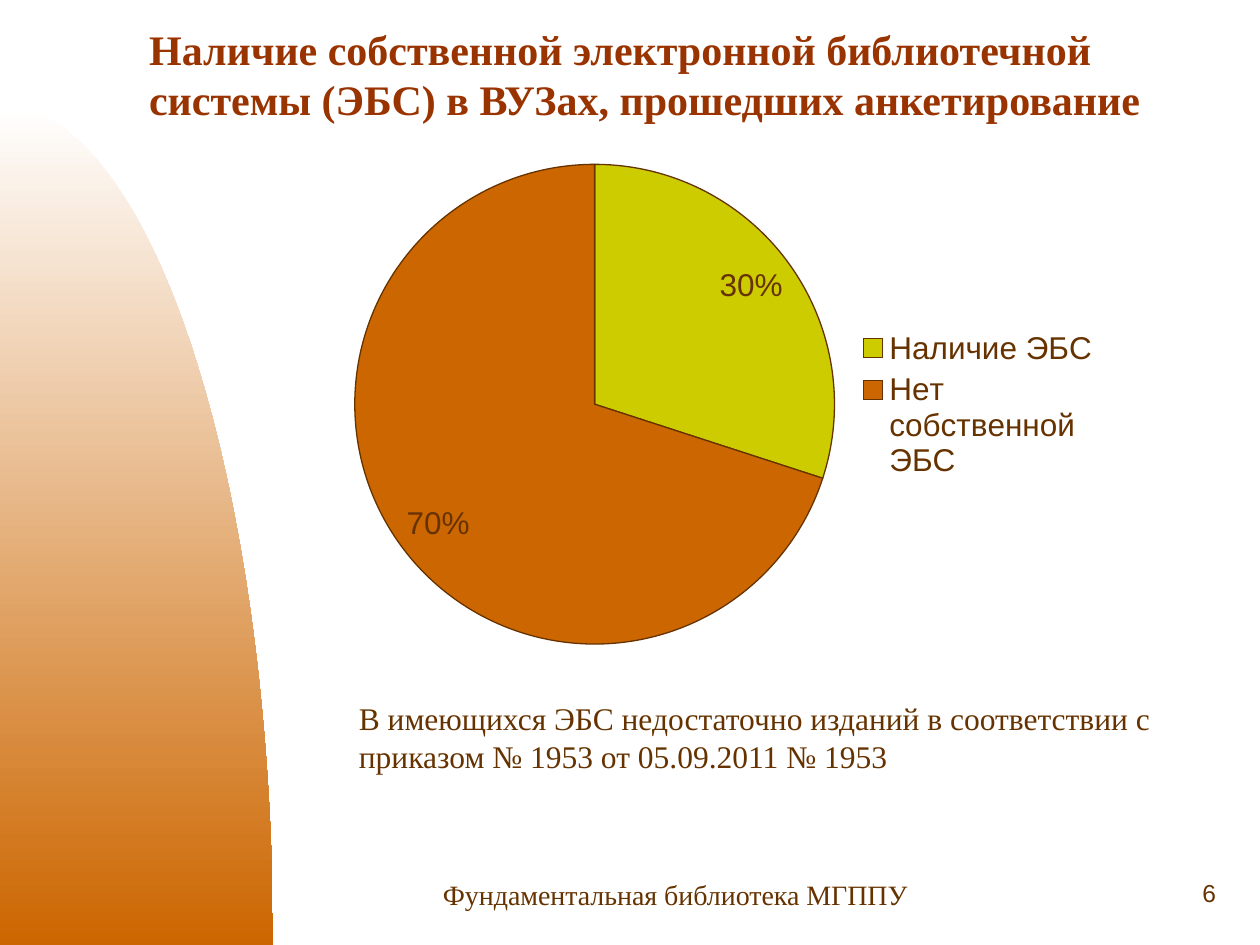
import math

import pptx
import pptx.chart.data
import pptx.dml.color
import pptx.enum.chart
import pptx.enum.text
import pptx.util

Pt = pptx.util.Pt
ALIGN = pptx.enum.text.PP_ALIGN
ANCHOR = pptx.enum.text.MSO_ANCHOR

WIDTH, HEIGHT = 720, 540
BROWN, RUST, ORANGE, LIME, WHITE = "663300", "993300", "CC6600", "CCCC00", "FFFFFF"
SERIF, SANS = "Times New Roman", "Arial"

TITLE = {
    "text": "Наличие собственной электронной библиотечной системы (ЭБС) в ВУЗах, прошедших анкетирование",
    "box": (78, 18, 618, 48), "anchor": ANCHOR.MIDDLE, "align": ALIGN.LEFT,
    "color": RUST, "font": {"name": SERIF, "size": Pt(24), "bold": True},
}
TEXTS = [
    {"text": "6", "box": (552, 492, 150, 36), "anchor": ANCHOR.MIDDLE,
     "align": ALIGN.RIGHT, "color": BROWN, "font": {"name": SANS, "size": Pt(14)}},
    {"text": "Фундаментальная библиотека МГППУ", "box": (246, 498, 306, 24),
     "anchor": ANCHOR.TOP, "align": ALIGN.LEFT, "color": BROWN,
     "font": {"name": SERIF, "size": Pt(16)}},
    {"text": "В имеющихся ЭБС недостаточно изданий в соответствии с приказом № 1953 от 05.09.2011 № 1953",
     "box": (198, 396, 468, 51), "anchor": ANCHOR.TOP, "align": ALIGN.LEFT,
     "color": BROWN, "font": {"name": SERIF, "size": Pt(18)}},
]
CHART_BOX = (192, 84, 444, 294)
SLICES = [("Наличие ЭБС", 0.3, LIME), ("Нет собственной ЭБС", 0.7, ORANGE)]
ARC_RADII = (156, 480)
ARC_STEPS = 90


def rgb(value):
    return pptx.dml.color.RGBColor.from_string(value)


def points(box):
    return [Pt(length) for length in box]


def set_font(font, color, values):
    for name, value in values.items():
        setattr(font, name, value)
    font.color.rgb = rgb(color)


def fill_text(shape, item):
    frame = shape.text_frame
    frame.text = item["text"]
    frame_format = {
        "word_wrap": True, "auto_size": pptx.enum.text.MSO_AUTO_SIZE.NONE,
        "vertical_anchor": item["anchor"],
    }
    for name, value in frame_format.items():
        setattr(frame, name, value)
    paragraph = frame.paragraphs[0]
    paragraph.alignment = item["align"]
    set_font(paragraph.runs[0].font, item["color"], item["font"])


def add_arc(slide):
    """Draw the gradient quarter ellipse in the bottom left corner."""
    radius_x, radius_y = ARC_RADII
    angles = [math.pi / 2 * step / ARC_STEPS for step in range(ARC_STEPS + 1)]
    curve = [(radius_x * math.sin(angle), HEIGHT - radius_y * math.cos(angle))
             for angle in angles]
    builder = slide.shapes.build_freeform(
        0, Pt(HEIGHT - radius_y), scale=1.0)
    builder.add_line_segments(
        [(Pt(x), Pt(y)) for x, y in curve[1:] + [(0, HEIGHT)]], close=True)
    arc = builder.convert_to_shape()
    arc.shadow.inherit = False
    arc.line.fill.background()
    arc.fill.gradient()
    arc.fill.gradient_angle = 270
    for stop, position, color in zip(arc.fill.gradient_stops, (0, 1), (WHITE, ORANGE)):
        stop.position = position
        stop.color.rgb = rgb(color)


def add_pie(slide):
    names, values, colors = zip(*SLICES)
    data = pptx.chart.data.CategoryChartData(number_format="0%")
    data.categories = names
    data.add_series("Series 1", values)
    chart = slide.shapes.add_chart(
        pptx.enum.chart.XL_CHART_TYPE.PIE, *points(CHART_BOX), data).chart
    set_font(chart.font, BROWN, {"name": SANS, "size": Pt(18)})
    chart.has_title = False
    chart.has_legend = True
    chart.legend.position = pptx.enum.chart.XL_LEGEND_POSITION.RIGHT
    chart.legend.include_in_layout = False

    plot = chart.plots[0]
    plot.vary_by_categories = True
    plot.has_data_labels = True
    label_format = {
        "show_value": True, "show_percentage": False, "number_format": "0%",
        "number_format_is_linked": False,
        "position": pptx.enum.chart.XL_LABEL_POSITION.INSIDE_END,
    }
    for name, value in label_format.items():
        setattr(plot.data_labels, name, value)
    for index, color in enumerate(colors):
        piece = plot.series[0].points[index].format
        piece.fill.solid()
        piece.fill.fore_color.rgb = rgb(color)
        piece.line.color.rgb = rgb(BROWN)
        piece.line.width = Pt(0.75)


def main():
    presentation = pptx.Presentation()
    presentation.slide_width, presentation.slide_height = Pt(WIDTH), Pt(HEIGHT)
    slide = presentation.slides.add_slide(presentation.slide_layouts[5])

    add_arc(slide)
    title = slide.shapes.title
    title.left, title.top, title.width, title.height = points(TITLE["box"])
    fill_text(title, TITLE)
    add_pie(slide)
    for item in TEXTS:
        fill_text(slide.shapes.add_textbox(*points(item["box"])), item)

    presentation.save("out.pptx")


if __name__ == "__main__":
    main()
